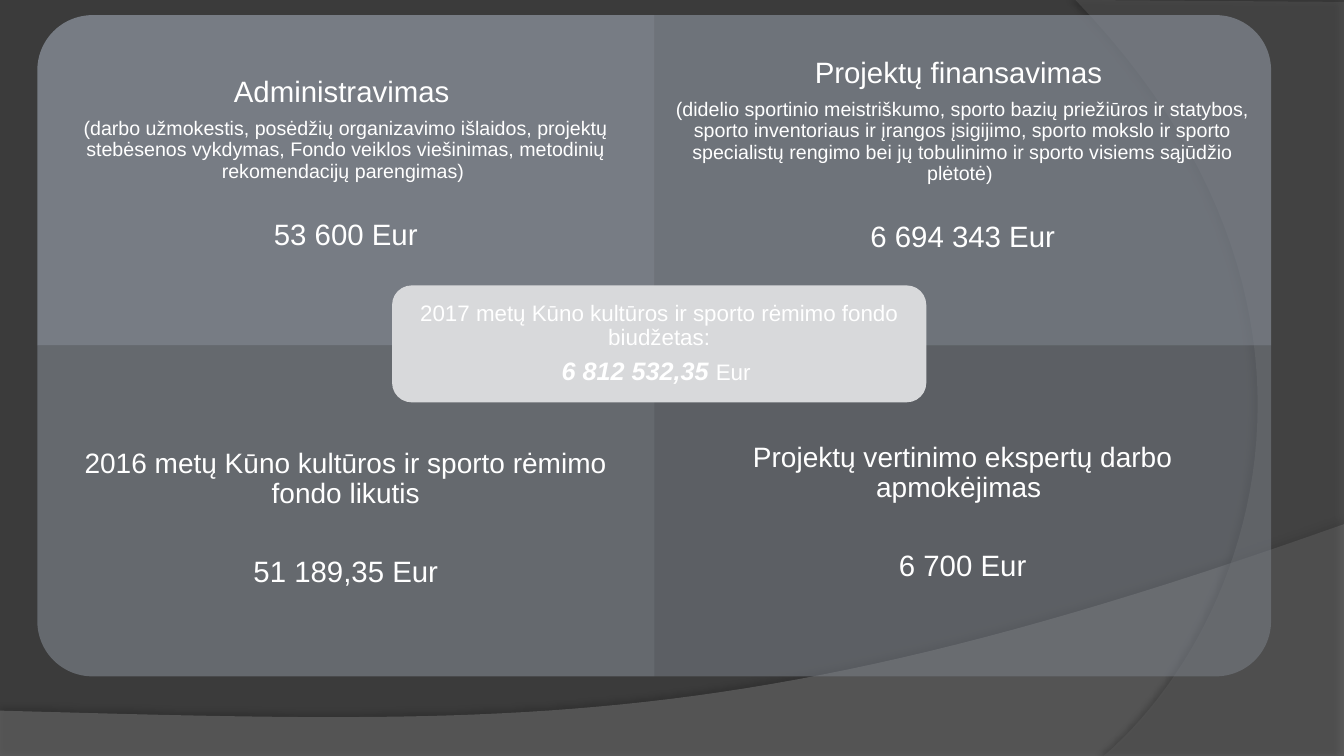
import pptx
import pptx.util
import pptx.dml.color
import pptx.enum.shapes
import pptx.enum.text
import pptx.oxml
import pptx.oxml.ns

Pt = pptx.util.Pt
RGBColor = pptx.dml.color.RGBColor
SHAPES = pptx.enum.shapes.MSO_SHAPE
ANCHOR = pptx.enum.text.MSO_ANCHOR

WHITE = RGBColor(0xFF, 0xFF, 0xFF)
DARK = RGBColor(0x3B, 0x3B, 0x3B)
WAVE_GRAY = RGBColor(0x7F, 0x7F, 0x7F)
ARC_GRAY = RGBColor(0x5E, 0x5E, 0x5E)
PANEL_GRAY = RGBColor(0x7E, 0x84, 0x8D)
CENTRE_GRAY = RGBColor(0xD8, 0xD9, 0xDB)

PAGE_WIDTH, PAGE_HEIGHT = 960, 540
LEFT, TOP, PANEL_WIDTH, PANEL_HEIGHT = 26.64, 10.8, 440.64, 236.16
INSET = 11.5

WAVE = {
    "corners": [(0, 507.6), (0, 540.7), (960, 540.7), (960, 374.4)],
    "curve": [(960, 374.4), (536.4, 524.9), (375.1, 517.7), (0, 507.6)],
    "color": WAVE_GRAY, "opacity": 45, "shadow": (35, 4, 3.5, 270),
}
ARC = {
    "corners": [(960, 1.4), (960, 540), (788.4, 540)],
    "curve": [(788.4, 540), (897.1, 445.7), (977, 216), (768.2, 0)],
    "color": ARC_GRAY, "opacity": 40, "shadow": (45, 4, 4, 180),
}

# column, row, rotation, opacity, text top, paragraphs of (text, size, space after)
PANELS = [
    (0, 0, 270, 90, 54.8, [
        ("Administravimas ", 21, 7.35),
        ("(darbo užmokestis, posėdžių organizavimo išlaidos, projektų stebėsenos vykdymas, "
         "Fondo veiklos viešinimas, metodinių rekomendacijų parengimas) ", 14, 27),
        ("53 600 Eur", 21, 0)]),
    (1, 0, 0, 77, 41.2, [
        ("Projektų finansavimas ", 21, 7.35),
        ("(didelio sportinio meistriškumo, sporto bazių priežiūros ir statybos, sporto "
         "inventoriaus ir įrangos įsigijimo, sporto mokslo ir sporto specialistų rengimo "
         "bei jų tobulinimo ir sporto visiems sąjūdžio plėtotė) ", 14, 27),
        ("6 694 343 Eur", 21, 0)]),
    (0, 1, 180, 63, 320.6, [
        ("2016 metų Kūno kultūros ir sporto rėmimo fondo likutis", 20, 34),
        ("51 189,35 Eur", 21, 0)]),
    (1, 1, 90, 50, 316.3, [
        ("Projektų vertinimo ekspertų darbo apmokėjimas ", 20, 34),
        ("6 700 Eur", 21, 0)]),
]
CENTRE_BOX = (280.08, 203.9, 381.6, 83.5)
CENTRE_TEXT = [
    ([("2017 metų Kūno kultūros ir sporto rėmimo fondo biudžetas:", 16, False)], 6),
    ([("6 812 532,35 ", 18, True), ("Eur ", 16, False)], 0),
]


def apply(target, formats):
    for name, value in formats.items():
        setattr(target, name, value)


def paint(shape, color, opacity=100):
    shape.shadow.inherit = False
    shape.line.fill.background()
    shape.fill.solid()
    shape.fill.fore_color.rgb = color
    if opacity < 100:
        tint = shape.fill._xPr.find(".//" + pptx.oxml.ns.qn("a:srgbClr"))
        tint.append(pptx.oxml.parse_xml(
            f'<a:alpha {pptx.oxml.ns.nsdecls("a")} val="{opacity * 1000}"/>'))


def write(shape, paragraphs, inset, anchor):
    frame = shape.text_frame
    apply(frame, {"word_wrap": True, "vertical_anchor": anchor,
                  "margin_left": Pt(inset), "margin_right": Pt(inset),
                  "margin_top": 0, "margin_bottom": 0})
    for index, (spans, gap) in enumerate(paragraphs):
        para = frame.add_paragraph() if index else frame.paragraphs[0]
        apply(para, {"alignment": pptx.enum.text.PP_ALIGN.CENTER,
                     "line_spacing": 0.9, "space_before": Pt(0), "space_after": Pt(gap)})
        for text, size, strong in spans:
            span = para.add_run()
            span.text = text
            apply(span.font, {"name": "Arial", "size": Pt(size),
                              "bold": strong, "italic": strong})
            span.font.color.rgb = WHITE


def bezier(points, steps=48):
    for step in range(1, steps + 1):
        t = step / steps
        weights = ((1 - t) ** 3, 3 * t * (1 - t) ** 2, 3 * t * t * (1 - t), t ** 3)
        yield tuple(sum(w * point[axis] for w, point in zip(weights, points))
                    for axis in (0, 1))


def add_swoosh(page, swoosh):
    outline = swoosh["corners"] + list(bezier(swoosh["curve"]))
    builder = page.shapes.build_freeform(*(Pt(value) for value in outline[0]))
    builder.add_line_segments([(Pt(x), Pt(y)) for x, y in outline[1:]], close=True)
    shape = builder.convert_to_shape()
    paint(shape, swoosh["color"], swoosh["opacity"])
    alpha, blur, distance, angle = swoosh["shadow"]
    effects = shape._element.spPr.find(pptx.oxml.ns.qn("a:effectLst"))
    effects.append(pptx.oxml.parse_xml(
        f'<a:outerShdw {pptx.oxml.ns.nsdecls("a")} blurRad="{Pt(blur)}" '
        f'dist="{Pt(distance)}" dir="{angle * 60000}" algn="ctr" rotWithShape="0">'
        f'<a:srgbClr val="000000"><a:alpha val="{alpha * 1000}"/></a:srgbClr></a:outerShdw>'))


def add_panel(page, column, row, rotation, opacity, text_top, paragraphs):
    left, top = LEFT + column * PANEL_WIDTH, TOP + row * PANEL_HEIGHT
    width, height = PANEL_WIDTH, PANEL_HEIGHT
    if rotation % 180:
        left, top = left + (width - height) / 2, top + (height - width) / 2
        width, height = height, width
    panel = page.shapes.add_shape(SHAPES.ROUND_1_RECTANGLE,
                                  Pt(left), Pt(top), Pt(width), Pt(height))
    panel.rotation = rotation
    paint(panel, PANEL_GRAY, opacity)
    box = page.shapes.add_textbox(Pt(LEFT + column * PANEL_WIDTH), Pt(text_top),
                                  Pt(PANEL_WIDTH), Pt(140))
    write(box, [([(text, size, False)], gap) for text, size, gap in paragraphs],
          INSET, ANCHOR.TOP)


def main():
    deck = pptx.Presentation()
    apply(deck, {"slide_width": Pt(PAGE_WIDTH), "slide_height": Pt(PAGE_HEIGHT)})
    page = deck.slides.add_slide(deck.slide_layouts[6])
    page.background.fill.solid()
    page.background.fill.fore_color.rgb = DARK
    for swoosh in (WAVE, ARC):
        add_swoosh(page, swoosh)
    for panel in PANELS:
        add_panel(page, *panel)
    centre = page.shapes.add_shape(SHAPES.ROUNDED_RECTANGLE,
                                   *(Pt(value) for value in CENTRE_BOX))
    paint(centre, CENTRE_GRAY)
    write(centre, CENTRE_TEXT, 9, ANCHOR.MIDDLE)
    deck.save("out.pptx")


if __name__ == "__main__":
    main()
